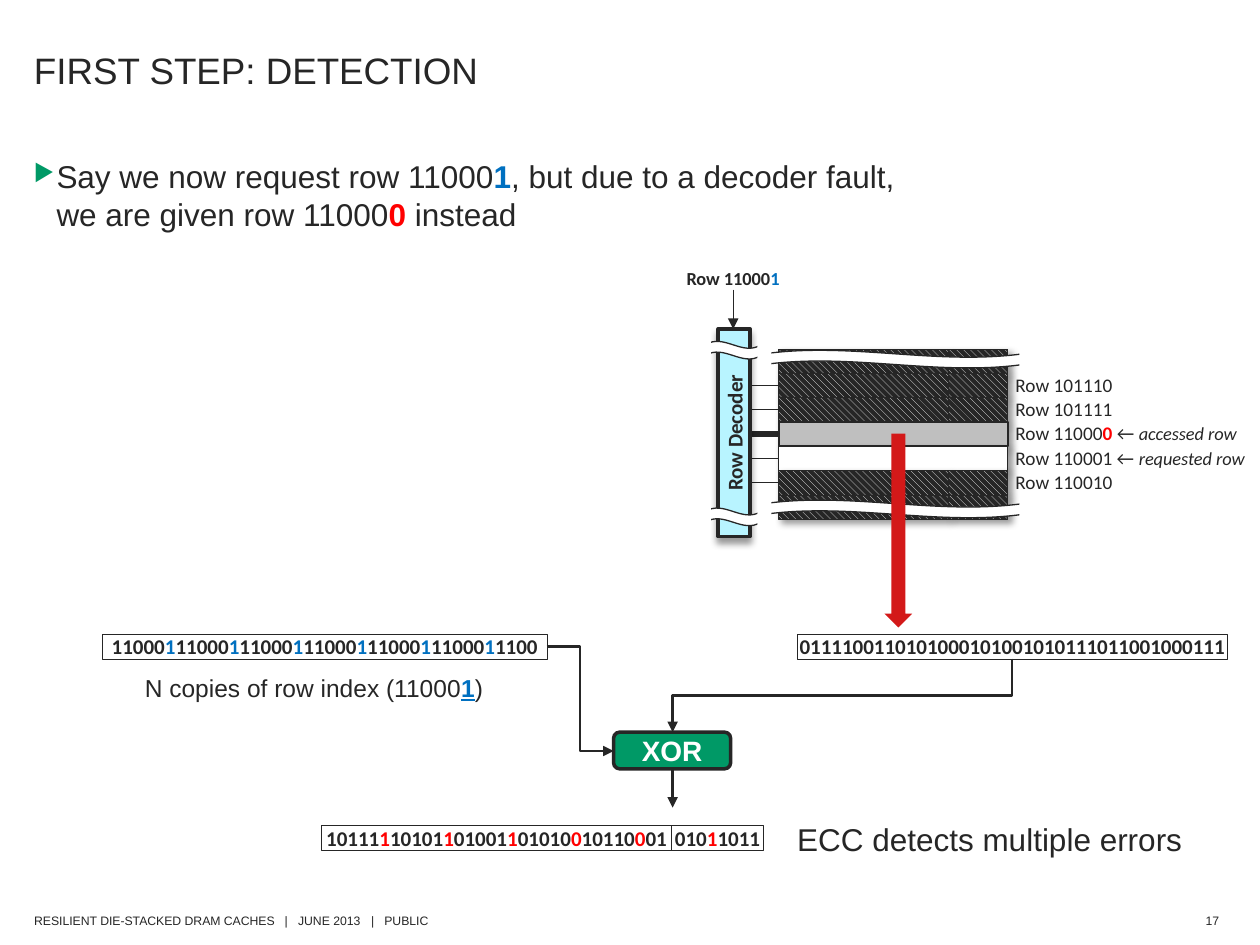
import pptx
import pptx.dml.color
import pptx.enum.dml
import pptx.enum.shapes
import pptx.enum.text
import pptx.oxml.ns
import pptx.util
from dataclasses import dataclass
from lxml import etree

Cm, Pt = pptx.util.Cm, pptx.util.Pt
qn = pptx.oxml.ns.qn
SHAPE = pptx.enum.shapes.MSO_SHAPE
LINK = pptx.enum.shapes.MSO_CONNECTOR
ALIGN = pptx.enum.text.PP_ALIGN
ANCHOR = pptx.enum.text.MSO_ANCHOR
FIT = pptx.enum.text.MSO_AUTO_SIZE


@dataclass(frozen=True)
class Theme:
    ink: str = "262626"
    white: str = "FFFFFF"
    green: str = "009966"
    blue: str = "0070C0"
    red: str = "FF0000"
    arrow: str = "D31919"
    decoder: str = "B8F4FF"
    accessed: str = "BFBFBF"
    sans: str = "Arial"
    label: str = "Calibri"
    title: float = 21
    body: float = 18
    xor: float = 16
    note: float = 14
    bits: float = 12
    row: float = 11
    remark: float = 10.5
    footer: float = 7


T = Theme()


def rgb(color):
    return pptx.dml.color.RGBColor.from_string(color)


def font(name, size, **more):
    return {"name": name, "size": Pt(size), "color": T.ink, **more}


def add_sub(parent, tag, **attrs):
    return etree.SubElement(parent, qn(tag), attrs)


def marked(text, **accent):
    """Split at bars; every second piece takes the accent format."""
    return [(piece, accent if i % 2 else {}) for i, piece in enumerate(text.split("|"))]


def write(tf, runs, base, align=ALIGN.LEFT, anchor=ANCHOR.TOP, wrap=False, inset=None):
    frame = {"word_wrap": wrap, "vertical_anchor": anchor}
    if inset is not None:
        across, down = inset
        frame.update(margin_left=Cm(across), margin_right=Cm(across),
                     margin_top=Cm(down), margin_bottom=Cm(down))
    for key, value in frame.items():
        setattr(tf, key, value)
    p = tf.paragraphs[0]
    p.alignment = align
    for text, extra in runs:
        for i, line in enumerate(text.split("\n")):
            if i:
                p.add_line_break()
            r = p.add_run()
            r.text = line
            for key, value in {**base, **extra}.items():
                if key == "color":
                    r.font.color.rgb = rgb(value)
                else:
                    setattr(r.font, key, value)
    return p


def add_text(s, box, runs, base, **layout):
    tf = s.shapes.add_textbox(*map(Cm, box)).text_frame
    p = write(tf, runs, base, **layout)
    tf.auto_size = FIT.SHAPE_TO_FIT_TEXT
    return p


def add_block(s, kind, box, fill=None, line=None, shadow=None, hatch=False):
    sp = s.shapes.add_shape(kind, *map(Cm, box))
    sp.shadow.inherit = False
    if hatch:
        sp.fill.patterned()
        sp.fill.pattern = pptx.enum.dml.MSO_PATTERN.WIDE_DOWNWARD_DIAGONAL
        sp.fill.fore_color.rgb, sp.fill.back_color.rgb = rgb(T.white), rgb(T.ink)
    elif fill:
        sp.fill.solid()
        sp.fill.fore_color.rgb = rgb(fill)
    else:
        sp.fill.background()
    if line:
        sp.line.color.rgb, sp.line.width = rgb(T.ink), Pt(line)
    else:
        sp.line.fill.background()
    if shadow is not None:
        outer = add_sub(sp._element.spPr.find(qn("a:effectLst")), "a:outerShdw",
                        blurRad=str(Pt(4)), dist=str(Pt(3)), dir=str(shadow * 60000),
                        algn="tl", rotWithShape="0")
        add_sub(add_sub(outer, "a:srgbClr", val="000000"), "a:alpha", val="40000")
    return sp


def add_line(s, x1, y1, x2, y2, width, arrow=False, kind=LINK.STRAIGHT):
    c = s.shapes.add_connector(kind, Cm(x1), Cm(y1), Cm(x2), Cm(y2))
    c.line.color.rgb, c.line.width = rgb(T.ink), Pt(width)
    if arrow:
        add_sub(c._element.spPr.find(qn("a:ln")), "a:tailEnd", type="triangle")
    add_sub(c._element.spPr, "a:effectLst")
    return c


def add_drop_elbow(s, x1, y1, x2, y2, width):
    """Elbow that leaves and arrives vertically: a quarter-turned one."""
    cx, cy, dx, dy = (x1 + x2) / 2, (y1 + y2) / 2, (x1 - x2) / 2, (y2 - y1) / 2
    c = add_line(s, cx - dy, cy - dx, cx + dy, cy + dx, width, True, LINK.ELBOW)
    c._element.spPr.find(qn("a:xfrm")).set("rot", "5400000")


def add_wave(s, box):
    add_block(s, SHAPE.WAVE, box, T.white, 0.75).adjustments[0] = 0.2


def add_mask(s, x, y, w):
    add_block(s, SHAPE.RECTANGLE, (x, y, w, 0.84), T.white)


def add_bits(s, x, y, w, text, accent):
    sp = add_block(s, SHAPE.RECTANGLE, (x, y, w, 0.51), line=0.25)
    write(sp.text_frame, marked(text, color=accent),
          font(T.label, T.bits, bold=True), ALIGN.CENTER, inset=(0, 0))


def add_heading(s):
    title = s.shapes.title
    title.left, title.top, title.width, title.height = map(Cm, (0.43, 0.51, 20.83, 1.78))
    write(title.text_frame, marked("FIRST STEP: DETECTION"), font(T.sans, T.title),
          anchor=ANCHOR.MIDDLE, wrap=True)
    p = add_text(s, (0.43, 3.05, 23.6, 3.73), [
        ("Say we now request row 11000", {}), ("1", {"color": T.blue, "bold": True}),
        (", but due to a decoder fault,\nwe are given row 11000", {}),
        ("0", {"color": T.red, "bold": True}), (" instead", {}),
    ], font(T.sans, T.body), wrap=True)
    pPr = p._p.get_or_add_pPr()
    pPr.set("marL", str(Cm(0.46)))
    pPr.set("indent", str(-Cm(0.46)))
    add_sub(add_sub(pPr, "a:buClr"), "a:srgbClr", val=T.green)
    add_sub(pPr, "a:buSzPct", val="75000")
    add_sub(pPr, "a:buChar", char="▶")


def add_footer(s):
    base, inset = font(T.sans, T.footer), (0.23, 0.1)
    p = add_text(s, (0.46, 18.29, 8.46, 0.53),
                 [("RESILIENT DIE-STACKED DRAM CACHES\t|\tJUNE 2013\t|\tPUBLIC", {})],
                 base, anchor=ANCHOR.MIDDLE, inset=inset)
    tabs = add_sub(p._p.get_or_add_pPr(), "a:tabLst")
    for stop in (5.05, 5.32, 6.79, 7.06):
        add_sub(tabs, "a:tab", pos=str(Cm(stop)), algn="l")
    add_text(s, (23.81, 18.29, 1, 0.53), marked("17"), base,
             align=ALIGN.RIGHT, anchor=ANCHOR.MIDDLE, inset=inset)


def add_memory(s):
    pitch, left, split, right = 0.49, 15.7, 19.13, 20.32
    # Word lines and decoder with torn ends
    for i in range(5):
        y = 7.77 + i * pitch
        add_line(s, 15.11, y, left, y, 3 if i == 2 else 0.75)
    sp = add_block(s, SHAPE.RECTANGLE, (14.48, 6.63, 0.64, 4.19), T.decoder, 2, shadow=90)
    write(sp.text_frame, marked("Row Decoder"), font(T.label, T.bits, bold=True),
          ALIGN.CENTER, ANCHOR.MIDDLE, inset=(0, 0))
    sp.text_frame._txBody.bodyPr.set("vert", "vert270")
    for wave_y, mask_y in ((10.24, 10.01), (6.88, 6.63)):
        add_wave(s, (14.22, wave_y, 1.12, 0.36))
        add_mask(s, 14.15, mask_y, 0.18)

    # Memory rows: two plain ones among hatched data and check parts
    plain = {3: T.accessed, 4: T.white}
    for i in range(7):
        parts = [(left, right)] if i in plain else [(left, split), (split, right)]
        for x1, x2 in parts:
            add_block(s, SHAPE.RECTANGLE, (x1, 7.04 + i * pitch, x2 - x1, pitch),
                      plain.get(i), 0.5, shadow=45, hatch=i not in plain)
    for y in (7.06, 10.08):
        add_wave(s, (15.42, y, 5.21, 0.36))
    for x, w, ys in ((15.27, 0.28, (6.63, 9.91)), (20.55, 0.18, (6.65, 10.06))):
        for y in ys:
            add_mask(s, x, y, w)

    # Row labels
    remark = {"size": Pt(T.remark), "italic": True}
    labels = [
        marked("Row 101110"),
        marked("Row 101111"),
        marked("Row 11000|0 |← ", color=T.red, bold=True) + [("accessed row", remark)],
        marked("Row 110001 ← |requested row", **remark),
        marked("Row 110010"),
    ]
    for i, runs in enumerate(labels):
        noted = len(runs) > 1
        add_text(s, (20.47, 7.52 + i * pitch, 4.92 if noted else 1.98, 0.48), runs,
                 font(T.label, T.row), wrap=noted, inset=(0, 0))

    # Request going in, accessed row coming out
    add_text(s, (13.84, 5.38, 1.93, 0.46), marked("Row 11000|1", color=T.blue),
             font(T.label, T.remark, bold=True), inset=(0, 0))
    add_line(s, 14.78, 5.84, 14.78, 6.63, 0.75, True)
    add_block(s, SHAPE.RECTANGLE, (left, 7.04 + 3 * pitch, right - left, pitch), line=1)
    add_block(s, SHAPE.DOWN_ARROW, (17.83, 8.74, 0.56, 3.91), T.arrow)


def add_check(s):
    # Operands
    add_bits(s, 2.06, 12.78, 8.97, "11000|1|" * 6 + "1100", T.blue)
    add_text(s, (2.67, 13.44, 7.37, 0.86),
             marked("N copies of row index (11000|1|)", color=T.blue, bold=True, underline=True),
             font(T.sans, T.note))
    add_bits(s, 16.08, 12.78, 8.66, "0111100110101000101001010111011001000111", T.blue)

    # XOR gate and its wires
    add_line(s, 13.56, 15.52, 13.56, 16.28, 1.5, True)
    sp = add_block(s, SHAPE.ROUNDED_RECTANGLE, (12.37, 14.76, 2.36, 0.74), T.green, 2)
    write(sp.text_frame, marked("XOR"), font(T.sans, T.xor, bold=True, color=T.white),
          ALIGN.CENTER, ANCHOR.MIDDLE, inset=(0, 0))
    add_line(s, 11.02, 13.03, 12.37, 15.14, 1.5, True, LINK.ELBOW)
    add_drop_elbow(s, 20.4, 13.28, 13.56, 14.76, 1.5)

    # Result
    add_text(s, (15.82, 16.41, 8.36, 1.02), marked("ECC detects multiple errors"),
             font(T.sans, T.body))
    add_bits(s, 6.48, 16.64, 7.06, "10111|1|10101|1|01001|1|01010|0|10110|0|01", T.red)
    add_bits(s, 13.54, 16.64, 1.85, "010|1|1011", T.red)


def main():
    prs = pptx.Presentation()
    prs.slide_width, prs.slide_height = Cm(25.4), Cm(19.05)
    s = prs.slides.add_slide(prs.slide_layouts[5])
    for add_part in (add_footer, add_heading, add_memory, add_check):
        add_part(s)
    prs.save("out.pptx")


if __name__ == "__main__":
    main()
